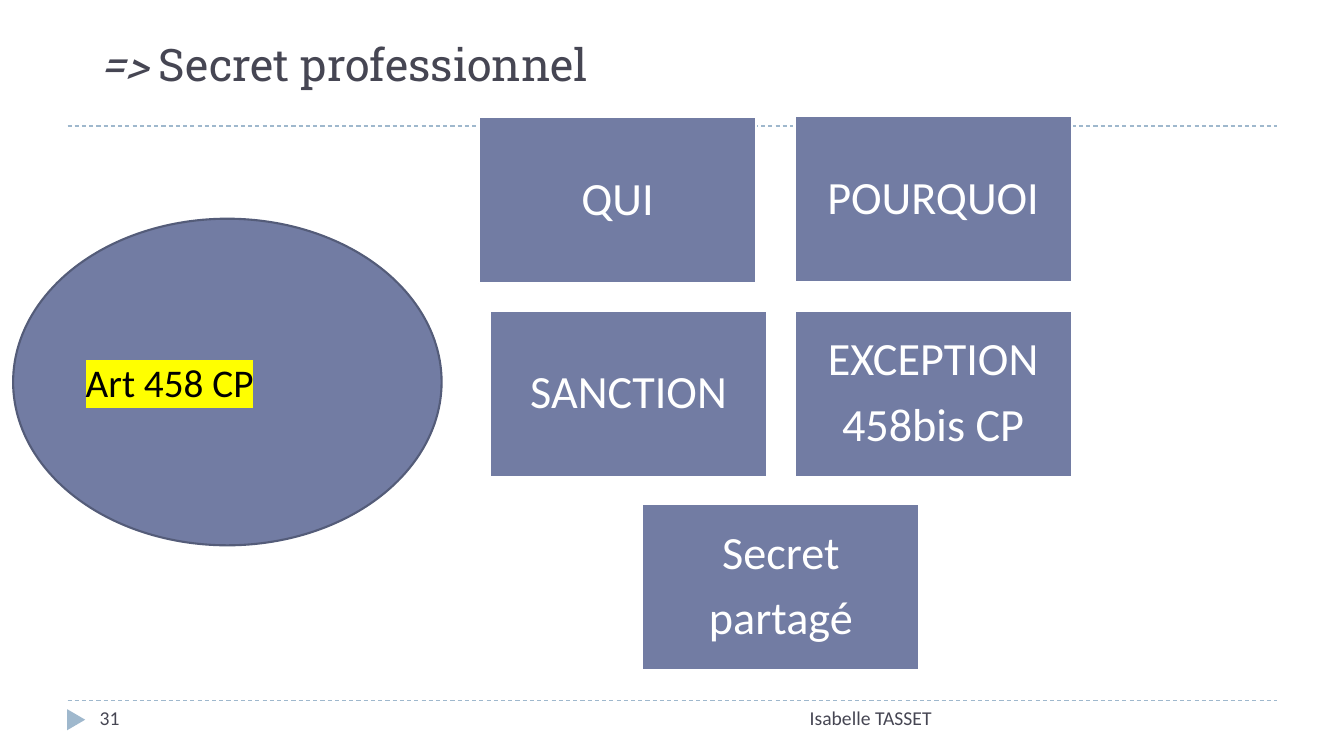
from dataclasses import dataclass

from lxml import etree
from pptx import Presentation
from pptx import util as u
from pptx.dml.color import RGBColor
from pptx.enum import dml, shapes, text
from pptx.oxml import ns

INK, ACCENT, PALE, WHITE = "464653", "727CA3", "9FB8CD", "FFFFFF"
CARD_WIDTH, CARD_HEIGHT = 2.75, 1.65


@dataclass(frozen=True)
class Card:
    left: float
    top: float
    lines: tuple[str, ...]


CARDS = (
    Card(4.75, 1.16, ("QUI",)),
    Card(7.88, 1.15, ("POURQUOI",)),
    Card(4.86, 3.08, ("SANCTION",)),
    Card(7.88, 3.08, ("EXCEPTION", "458bis CP")),
    Card(6.37, 5, ("Secret", "partagé")),
)


def color(value: str) -> RGBColor:
    return RGBColor.from_string(value)


def add_span(para, words: str, *, size: float, ink: str = INK, font: str = "Calibri",
             italic: bool = False, highlight: str | None = None) -> None:
    span = para.add_run()
    span.text = words
    span.font.size = u.Pt(size)
    span.font.name = font
    span.font.italic = italic
    span.font.color.rgb = color(ink)
    if highlight:
        mark = etree.Element(ns.qn("a:highlight"))
        etree.SubElement(mark, ns.qn("a:srgbClr")).set("val", highlight)
        span.font.fill  # the highlight must follow the text fill
        span.font._element.find(ns.qn("a:solidFill")).addnext(mark)


def add_box(page, left: float, top: float, width: float, height: float,
            anchor=text.MSO_ANCHOR.TOP):
    box = page.shapes.add_textbox(*map(u.Inches, (left, top, width, height)))
    box.text_frame.word_wrap = True
    box.text_frame.vertical_anchor = anchor
    return box


def add_figure(page, kind, left: float, top: float, width: float, height: float,
               fill: str, line: str | None = None):
    figure = page.shapes.add_shape(kind, *map(u.Inches, (left, top, width, height)))
    figure.shadow.inherit = False
    figure.fill.solid()
    figure.fill.fore_color.rgb = color(fill)
    if line:
        figure.line.color.rgb = color(line)
        figure.line.width = u.Pt(1.5)
    else:
        figure.line.fill.background()
    figure.text_frame.word_wrap = True
    figure.text_frame.vertical_anchor = text.MSO_ANCHOR.MIDDLE
    return figure


def add_rule(page, top: float) -> None:
    rule = page.shapes.add_connector(
        shapes.MSO_CONNECTOR.STRAIGHT, *map(u.Inches, (0.67, top, 12.67, top)))
    rule.line.color.rgb = color(PALE)
    rule.line.width = u.Pt(0.75)
    rule.line.dash_style = dml.MSO_LINE.DASH
    etree.SubElement(rule._element.spPr, ns.qn("a:effectLst"))


def add_card(page, card: Card) -> None:
    figure = add_figure(page, shapes.MSO_SHAPE.RECTANGLE, card.left, card.top,
                        CARD_WIDTH, CARD_HEIGHT, ACCENT, WHITE)
    frame = figure.text_frame
    frame.margin_left = frame.margin_right = u.Inches(0.14)
    frame.margin_top = frame.margin_bottom = u.Inches(0.14)
    for index, words in enumerate(card.lines):
        para = frame.add_paragraph() if index else frame.paragraphs[0]
        para.alignment = text.PP_ALIGN.CENTER
        para.line_spacing = 0.9
        para.space_after = u.Pt(11)
        add_span(para, words, size=33, ink=WHITE)


def main() -> None:
    deck = Presentation()
    deck.slide_width, deck.slide_height = u.Inches(13.33), u.Inches(7.5)
    page = deck.slides.add_slide(deck.slide_layouts[6])

    # Frame: dashed rules and footer marker
    for top in (6.95, 1.25):
        add_rule(page, top)
    marker = add_figure(page, shapes.MSO_SHAPE.ISOSCELES_TRIANGLE,
                        0.65, 7.05, 0.21, 0.18, PALE)
    marker.rotation = 90

    # Title
    title = add_box(page, 0.89, -0.13, 12, 1.08, text.MSO_ANCHOR.BOTTOM)
    heading = title.text_frame.paragraphs[0]
    add_span(heading, "=> ", size=32, font="Roboto Slab", italic=True)
    add_span(heading, "Secret professionnel", size=32, font="Roboto Slab")

    # Footer
    number = add_box(page, 0.89, 6.95, 2.89, 0.4)
    add_span(number.text_frame.paragraphs[0], "31", size=14)
    author = add_box(page, 4.23, 6.95, 5.11, 0.4).text_frame.paragraphs[0]
    author.alignment = text.PP_ALIGN.RIGHT
    add_span(author, "Isabelle TASSET", size=14)

    # Article of law
    article = add_figure(page, shapes.MSO_SHAPE.OVAL, 0.13, 2.17, 4.25, 3.24,
                         ACCENT, "545C79")
    para = article.text_frame.paragraphs[0]
    para.alignment = text.PP_ALIGN.LEFT
    add_span(para, "Art 458 CP", size=28, ink="000000", highlight="FFFF00")

    # Questions around the article
    for card in CARDS:
        add_card(page, card)

    deck.save("out.pptx")


if __name__ == "__main__":
    main()
